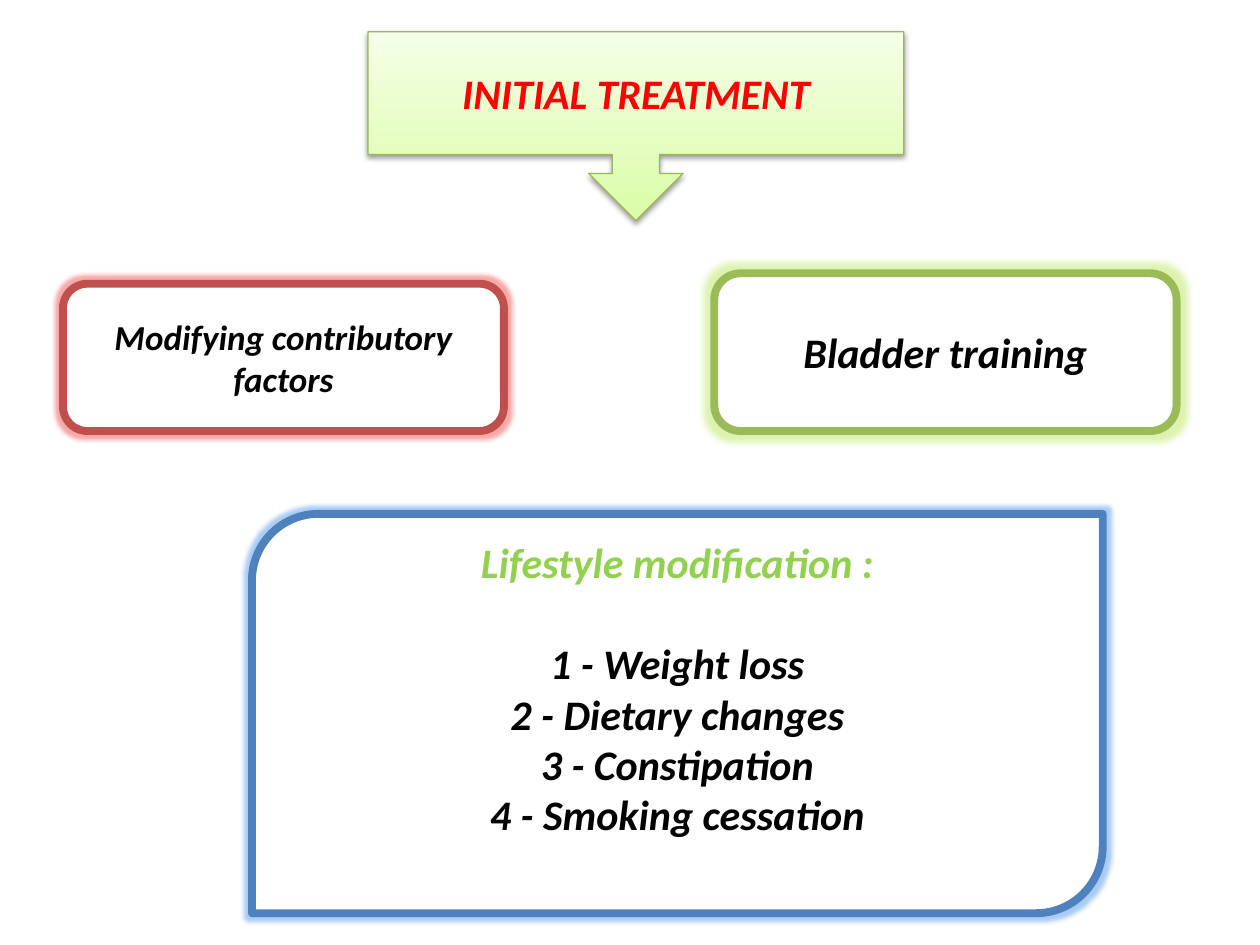
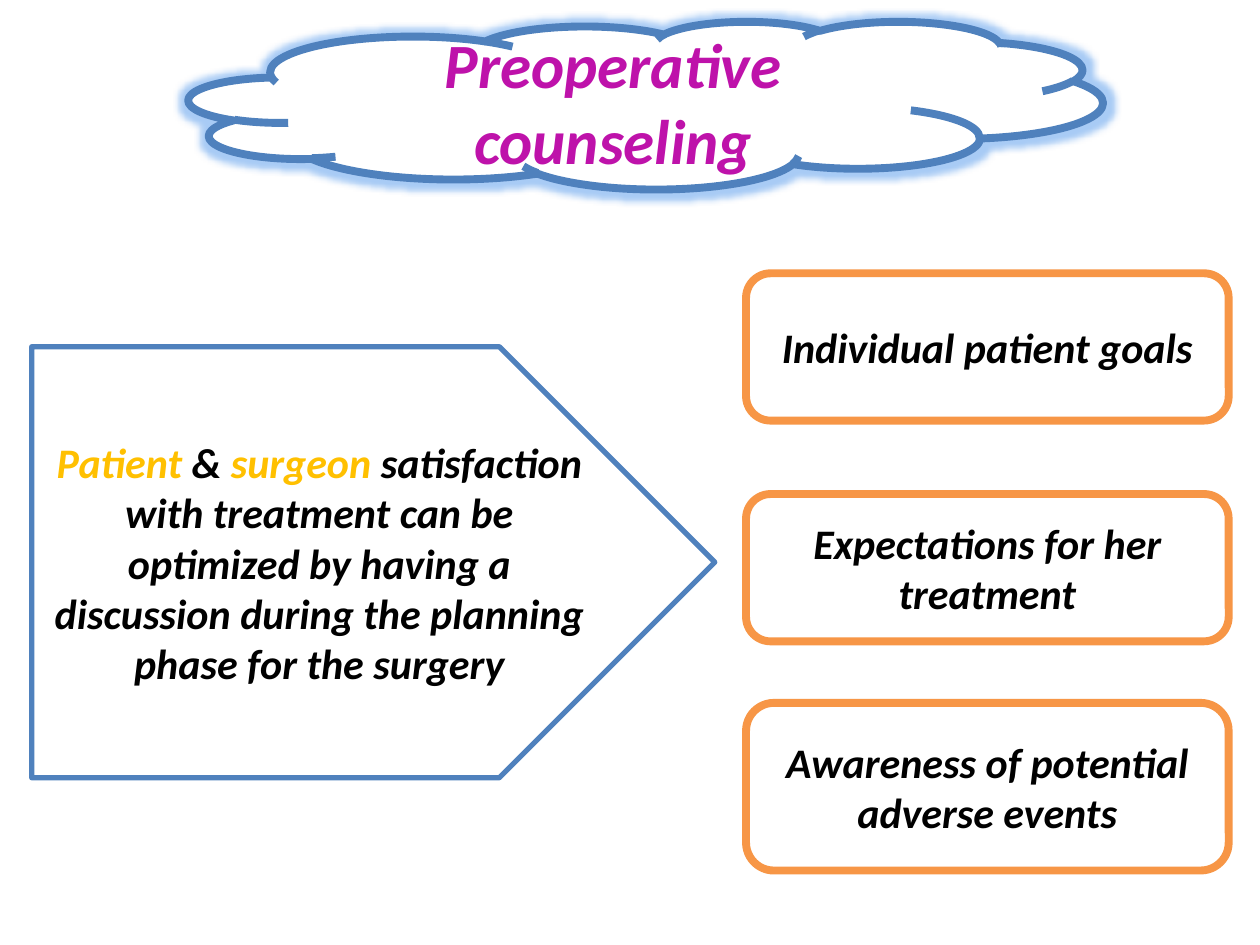
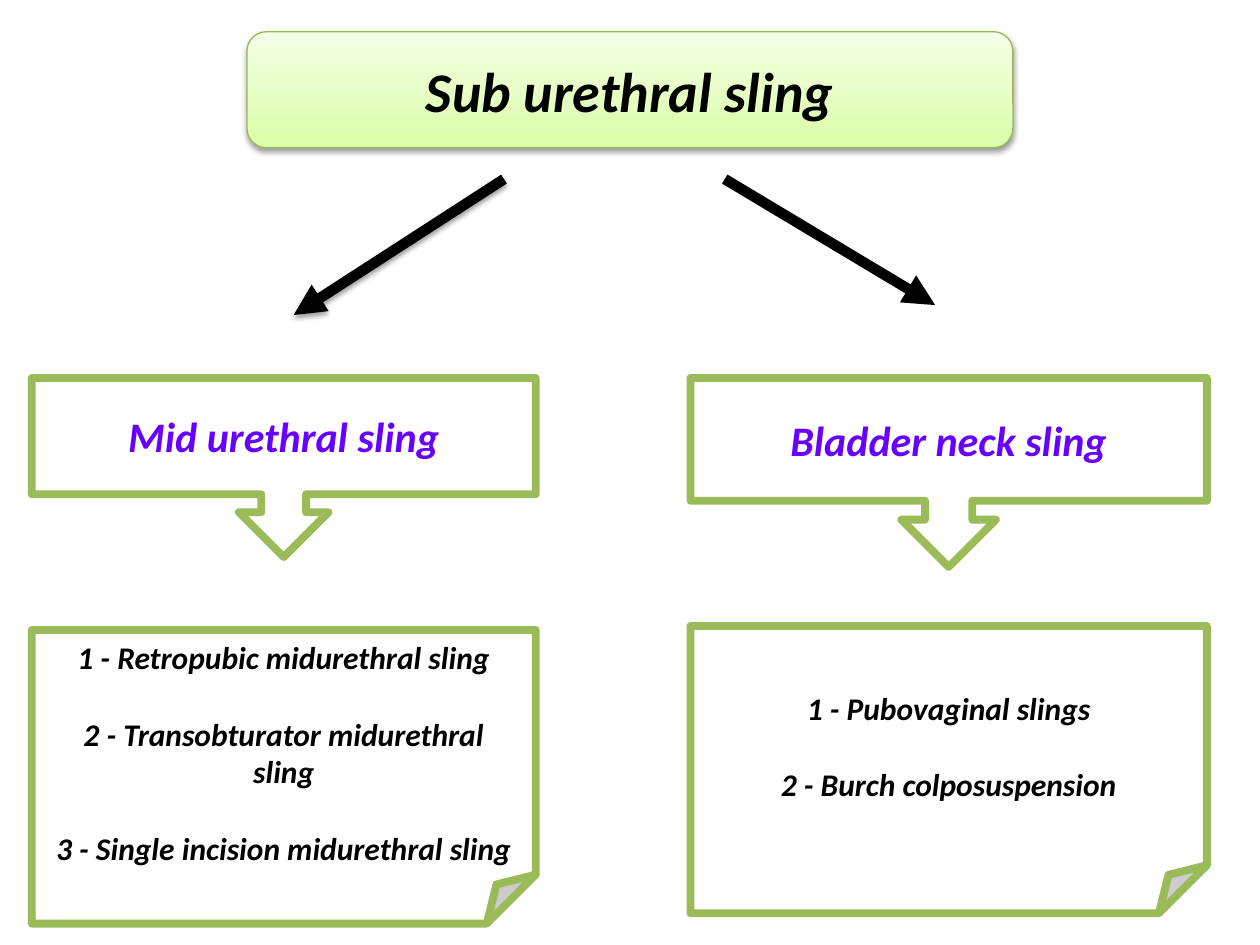
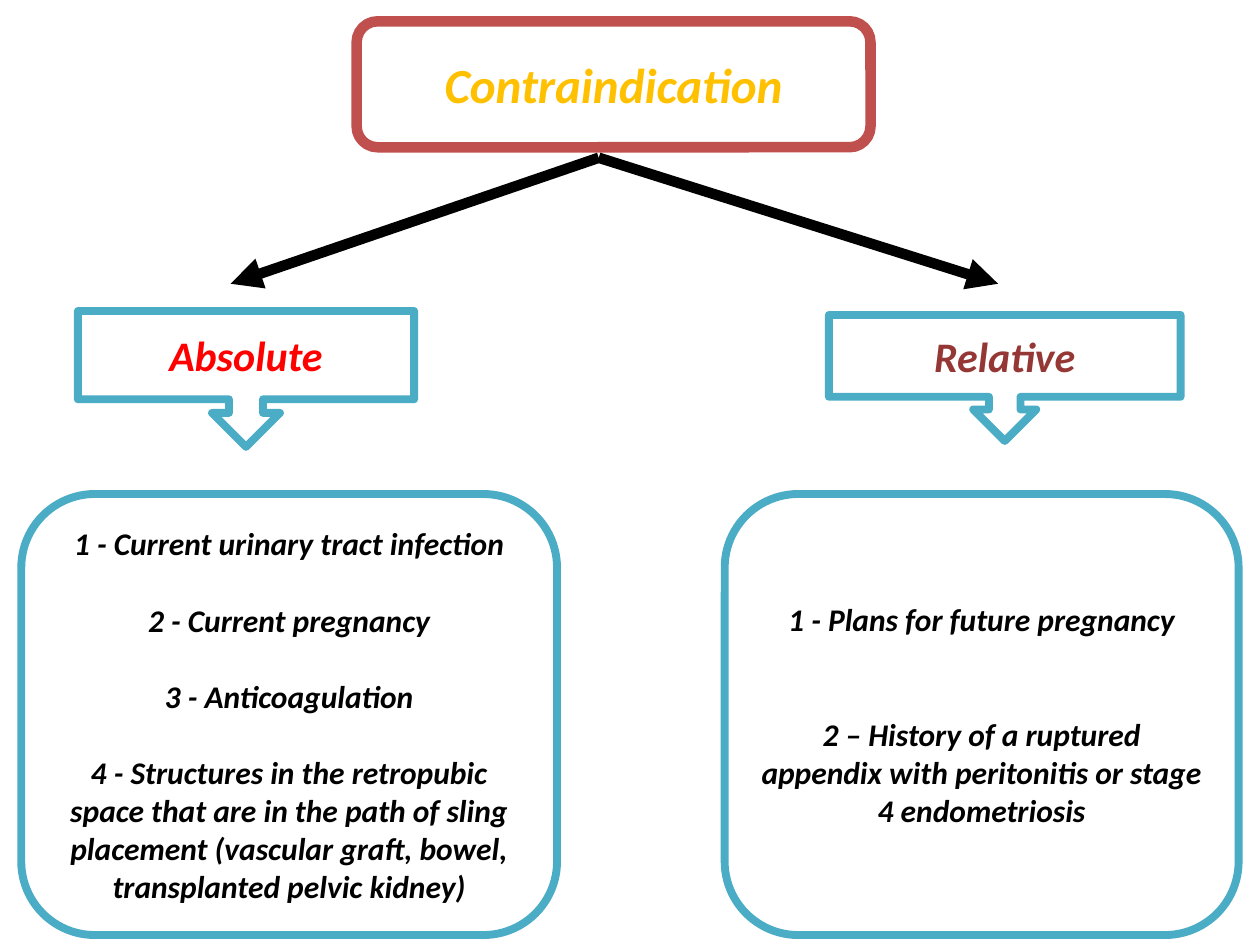
"""Build four slides on incontinence treatment, counseling, slings and contraindications."""
from dataclasses import dataclass

from pptx import Presentation
from pptx import util as u
from pptx.dml.color import RGBColor
from pptx.enum import shapes, text
from pptx.oxml import parse_xml
from pptx.oxml.ns import nsdecls, qn


@dataclass(frozen=True)
class Theme:
    font: str = "Calibri"
    black: str = "000000"
    white: str = "FFFFFF"
    blue: str = "4F81BD"
    red: str = "C0504D"
    green: str = "9BBB59"
    teal: str = "4BACC6"
    orange: str = "F79646"
    pale_top: str = "F5FFE7"
    pale_bottom: str = "DAFDA7"
    pale_edge: str = "98B955"
    bright_red: str = "FF0000"
    lime: str = "92D050"
    magenta: str = "BE12AA"
    gold: str = "FFC000"
    violet: str = "6600FF"
    maroon: str = "953735"
    cover: int = 36
    title: int = 32
    heading: int = 28
    body: int = 24
    factor: int = 20
    detail: int = 18
    line_height: float = 1.22
    border: float = 4.5
    heavy: float = 6


theme = Theme()
kinds = shapes.MSO_SHAPE
SHADOW = (
    f'<a:outerShdw {nsdecls("a")} blurRad="39370" dist="20320" dir="5400000" rotWithShape="0">'
    '<a:srgbClr val="000000"><a:alpha val="38000"/></a:srgbClr></a:outerShdw>'
)
GLOW = (
    f'<a:glow {nsdecls("a")} rad="{{radius}}"><a:srgbClr val="{{color}}">'
    '<a:satMod val="175000"/><a:alpha val="40000"/></a:srgbClr></a:glow>'
)


def add_box(slide, kind, place, lines, edge, size=theme.body, color=theme.black,
            width=theme.border, glow=0, raised=False):
    """Add a captioned shape; an empty line becomes space before the next one."""
    shape = slide.shapes.add_shape(kind, *(u.Cm(length) for length in place))
    shape.shadow.inherit = False
    effects = shape._element.spPr.find(qn("a:effectLst"))
    if raised:
        shape.fill.gradient()
        shape.fill.gradient_angle = 90
        for stop, tint, position in zip(shape.fill.gradient_stops,
                                        (theme.pale_bottom, theme.pale_top), (0, 1)):
            stop.color.rgb = RGBColor.from_string(tint)
            stop.position = position
        effects.append(parse_xml(SHADOW))
    else:
        shape.fill.solid()
        shape.fill.fore_color.rgb = RGBColor.from_string(theme.white)
    if glow:
        effects.append(parse_xml(GLOW.format(radius=u.Pt(glow), color=edge)))
    shape.line.color.rgb = RGBColor.from_string(edge)
    shape.line.width = u.Pt(width)

    frame = shape.text_frame
    frame.word_wrap = True
    frame.vertical_anchor = text.MSO_ANCHOR.MIDDLE
    paragraph, gap = None, 0
    for line in lines:
        if not line:
            gap += 1
            continue
        paragraph = frame.add_paragraph() if paragraph else frame.paragraphs[0]
        paragraph.alignment = text.PP_ALIGN.CENTER
        if gap:
            paragraph.space_before = u.Pt(round(gap * size * theme.line_height))
            gap = 0
        font = paragraph.font
        font.name, font.size, font.bold, font.italic = theme.font, u.Pt(size), True, True
        for words, tint in [(line, color)] if isinstance(line, str) else line:
            run = paragraph.add_run()
            run.text = words
            run.font.color.rgb = RGBColor.from_string(tint)
    return shape


def add_arrow(slide, start, end, shadow=False):
    """Add a heavy black arrow."""
    arrow = slide.shapes.add_connector(
        shapes.MSO_CONNECTOR.STRAIGHT, *(u.Cm(length) for length in (*start, *end)))
    arrow.line.color.rgb = RGBColor.from_string(theme.black)
    arrow.line.width = u.Pt(theme.heavy)
    arrow.line._get_or_add_ln().append(parse_xml(f'<a:tailEnd {nsdecls("a")} type="triangle"/>'))
    effects = parse_xml(f'<a:effectLst {nsdecls("a")}/>')
    if shadow:
        effects.append(parse_xml(SHADOW))
    arrow._element.spPr.append(effects)


presentation = Presentation()
presentation.slide_width, presentation.slide_height = u.Cm(25.4), u.Cm(19.05)
treatment, counseling, sling, contraindication = (
    presentation.slides.add_slide(presentation.slide_layouts[6]) for _ in range(4))

add_box(treatment, kinds.DOWN_ARROW_CALLOUT, (7.42, 0.64, 10.8, 3.81), ["INITIAL TREATMENT"],
        theme.pale_edge, color=theme.bright_red, width=0.75, raised=True)
add_box(treatment, kinds.ROUNDED_RECTANGLE, (1.27, 5.72, 8.89, 2.97),
        ["Modifying contributory factors"], theme.red, theme.factor, glow=5)
add_box(treatment, kinds.ROUNDED_RECTANGLE, (14.4, 5.51, 9.32, 3.18),
        ["Bladder training"], theme.green, glow=8)
lifestyle = add_box(
    treatment, kinds.ROUND_2_DIAG_RECTANGLE, (5.08, 10.36, 17.15, 8.05),
    [[("Lifestyle modification :", theme.lime)], "", "1 - Weight loss", "2 - Dietary changes",
     "3 - Constipation", "4 - Smoking cessation"], theme.blue, glow=5)
lifestyle.text_frame.margin_bottom = u.Cm(1.16)

add_box(counseling, kinds.CLOUD, (3.81, 0.43, 18.42, 3.38), ["Preoperative counseling"],
        theme.blue, theme.cover, theme.magenta, glow=8)
satisfaction = [
    ("Patient", theme.gold), (" & ", theme.black), ("surgeon", theme.gold),
    (" satisfaction with treatment can be optimized by having a discussion during "
     "the planning phase for the surgery", theme.black)]
add_box(counseling, kinds.PENTAGON, (0.64, 6.99, 13.77, 8.69), [satisfaction], theme.blue, width=3)
for top, height, topic in (
        (5.51, 2.97, "Individual patient goals"),
        (9.96, 2.97, "Expectations for her treatment"),
        (14.17, 3.38, "Awareness of potential adverse events")):
    add_box(counseling, kinds.ROUNDED_RECTANGLE, (15.04, top, 9.73, height), [topic], theme.orange)

add_box(sling, kinds.ROUNDED_RECTANGLE, (4.98, 0.64, 15.44, 2.34), ["Sub urethral sling"],
        theme.pale_edge, theme.title, width=0.75, raised=True)
add_arrow(sling, (10.16, 3.61), (5.92, 6.35), shadow=True)
add_arrow(sling, (14.61, 3.61), (18.85, 6.15))
for left, width, name, name_height, top, height, types in (
        (0.64, 10.16, "Mid urethral sling", 3.61, 12.7, 5.92,
         ["1 - Retropubic midurethral sling", "", "2 - Transobturator midurethral", "sling", "",
          "3 - Single incision midurethral sling"]),
        (13.92, 10.41, "Bladder neck sling", 3.81, 12.62, 5.79,
         ["1 - Pubovaginal slings", "", "2 - Burch colposuspension"])):
    add_box(sling, kinds.DOWN_ARROW_CALLOUT, (left, 7.62, width, name_height), [name],
            theme.green, color=theme.violet)
    add_box(sling, kinds.FOLDED_CORNER, (left, top, width, height), types,
            theme.green, theme.detail)

add_box(contraindication, kinds.ROUNDED_RECTANGLE, (7.19, 0.43, 10.36, 2.54),
        ["Contraindication"], theme.red, theme.heading, theme.gold, theme.heavy)
for tip, name, color, name_place, left, width, reasons in (
        (4.65, "Absolute", theme.bright_red, (1.57, 6.27, 6.78, 2.74), 0.43, 10.8,
         ["1 - Current urinary tract infection", "", "2 - Current pregnancy", "",
          "3 - Anticoagulation", "",
          "4 - Structures in the retropubic space that are in the path of sling placement "
          "(vascular graft, bowel, transplanted pelvic kidney)"]),
        (20.12, "Relative", theme.maroon, (16.71, 6.35, 7.09, 2.54), 14.61, 10.36,
         ["1 - Plans for future pregnancy", "", "",
          "2 – History of a ruptured appendix with peritonitis or stage 4 endometriosis"])):
    add_arrow(contraindication, (12.07, 3.18), (tip, 5.72))
    add_box(contraindication, kinds.DOWN_ARROW_CALLOUT, name_place, [name], theme.teal, color=color)
    add_box(contraindication, kinds.ROUNDED_RECTANGLE, (left, 9.96, width, 8.89), reasons,
            theme.teal, theme.detail)

presentation.save("out.pptx")
